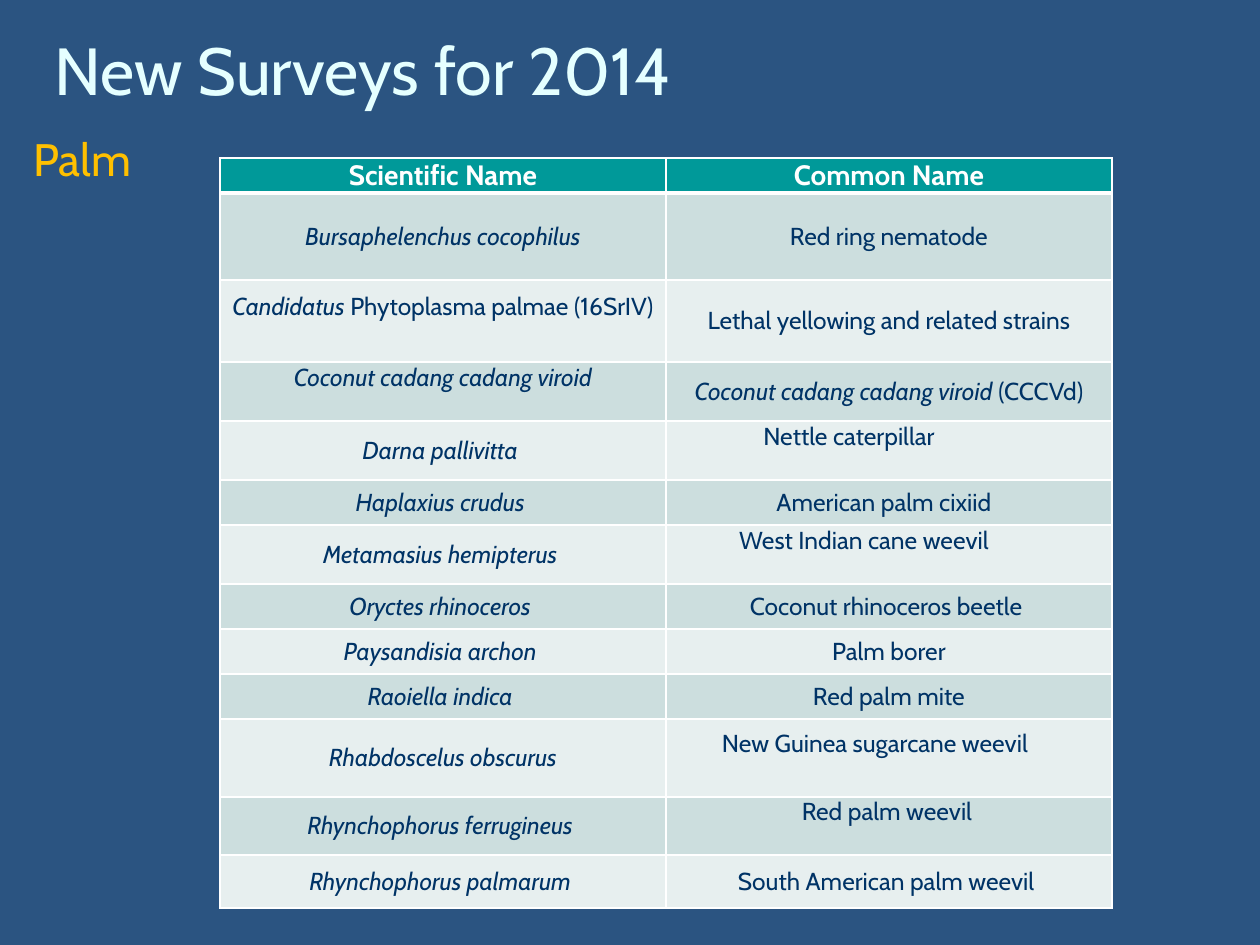
from lxml.etree import SubElement
from pptx import Presentation
from pptx.dml.color import RGBColor as RGB
from pptx.enum.text import MSO_ANCHOR as Anchor, PP_ALIGN as Align
from pptx.oxml.ns import qn
from pptx.util import Emu, Pt

COLORS = {
    "background": "2B5481", "title": "E5FFFF", "crop": "FFC000",
    "header": "009999", "header_text": "FFFFFF", "border": "FFFFFF",
    "odd_row": "CCDEDE", "even_row": "E7EFEF", "cell_text": "003366",
}
FONT = "Cabin"
RAISED = 28  # bottom margin of the cells whose text sits above the middle

# Row height, scientific name, common name; *asterisks* mark italics
PESTS = [
    (87, "*Bursaphelenchus cocophilus*", "Red ring nematode"),
    (82, "*Candidatus *Phytoplasma palmae (16SrIV)", "Lethal yellowing and related strains"),
    (59, "*Coconut cadang cadang viroid*", "*Coconut cadang cadang viroid *(CCCVd)"),
    (59, "*Darna pallivitta *", "Nettle caterpillar"),
    (45, "*Haplaxius crudus *", "American palm cixiid"),
    (59, "*Metamasius hemipterus *", "West Indian cane weevil"),
    (45, "*Oryctes rhinoceros *", "Coconut rhinoceros beetle "),
    (45, "*Paysandisia archon *", "Palm borer"),
    (45, "*Raoiella indica *", "Red palm mite"),
    (78, "*Rhabdoscelus obscurus*", "New Guinea sugarcane weevil"),
    (58, "*Rhynchophorus ferrugineus *", "Red palm weevil"),
    (53, "*Rhynchophorus palmarum *", "South American palm weevil "),
]
# (row, column): right and bottom margins of the cells that are off centre
OFFSETS = {
    (2, 0): (0, RAISED), (3, 0): (0, RAISED), (4, 1): (80, RAISED),
    (5, 1): (10, 0), (6, 1): (50, RAISED), (10, 1): (28, RAISED),
    (11, 1): (4, RAISED),
}


def px(length):
    return Emu(round(length * 914400 / 126))


def write(frame, text, size, color, bold=False, align=Align.LEFT):
    """Fill a text frame; every second part between asterisks is italic."""
    paragraph = frame.paragraphs[0]
    paragraph.alignment = align
    for index, part in enumerate(text.split("*")):
        if not part:
            continue
        run = paragraph.add_run()
        run.text = part
        font = run.font
        font.name, font.size, font.bold = FONT, Pt(size), bold
        font.italic = index % 2 == 1
        font.color.rgb = RGB.from_string(COLORS[color])


class SurveySlide:
    def __init__(self, deck):
        self.slide = deck.slides.add_slide(deck.slide_layouts[6])
        fill = self.slide.background.fill
        fill.solid()
        fill.fore_color.rgb = RGB.from_string(COLORS["background"])

    def label(self, text, box, anchor=Anchor.TOP, **style):
        frame = self.slide.shapes.add_textbox(*map(px, box)).text_frame
        frame.word_wrap = True
        frame.vertical_anchor = anchor
        write(frame, text, **style)

    def borders(self, cell, top, bottom):
        properties = cell._tc.get_or_add_tcPr()
        for side, width in (("L", 1), ("R", 1), ("T", top), ("B", bottom)):
            line = SubElement(properties, qn(f"a:ln{side}"), w=str(Pt(width)))
            fill = SubElement(line, qn("a:solidFill"))
            SubElement(fill, qn("a:srgbClr"), val=COLORS["border"])

    def cell(self, cell, text, fill, margins=(0, 0), top=1, bottom=1, **style):
        self.borders(cell, top, bottom)
        cell.fill.solid()
        cell.fill.fore_color.rgb = RGB.from_string(COLORS[fill])
        cell.margin_left = cell.margin_top = 0
        cell.margin_right, cell.margin_bottom = map(px, margins)
        cell.vertical_anchor = Anchor.MIDDLE
        write(cell.text_frame, text, align=Align.CENTER, **style)

    def pest_table(self, left, top, column_width, header_height, names, pests):
        heights = [header_height] + [height for height, *_ in pests]
        table = self.slide.shapes.add_table(
            len(heights), len(names), px(left), px(top),
            px(column_width * len(names)), px(sum(heights))).table
        table.first_row = table.horz_banding = False
        for column in table.columns:
            column.width = px(column_width)
        for row, height in zip(table.rows, heights):
            row.height = px(height)

        # Header
        for col, name in enumerate(names):
            self.cell(table.cell(0, col), name, "header", bottom=3,
                      size=16, color="header_text", bold=True)
        # Pests, in alternating bands
        for row, (_, *texts) in enumerate(pests, start=1):
            for col, text in enumerate(texts):
                self.cell(table.cell(row, col), text,
                          "odd_row" if row % 2 else "even_row",
                          margins=OFFSETS.get((row, col), (0, 0)),
                          top=3 if row == 1 else 1,
                          size=14, color="cell_text")


def main():
    deck = Presentation()
    deck.slide_width, deck.slide_height = px(1260), px(945)
    survey = SurveySlide(deck)

    # Title and crop
    survey.label("New Surveys for 2014", (42, 13, 1218, 112),
                 anchor=Anchor.MIDDLE, size=38, color="title")
    survey.label("Palm", (21, 125, 1218, 68), size=26, color="crop")

    # Surveyed pests
    survey.pest_table(220, 158, 446, 35, ["Scientific Name", "Common Name"], PESTS)
    deck.save("out.pptx")


if __name__ == "__main__":
    main()
